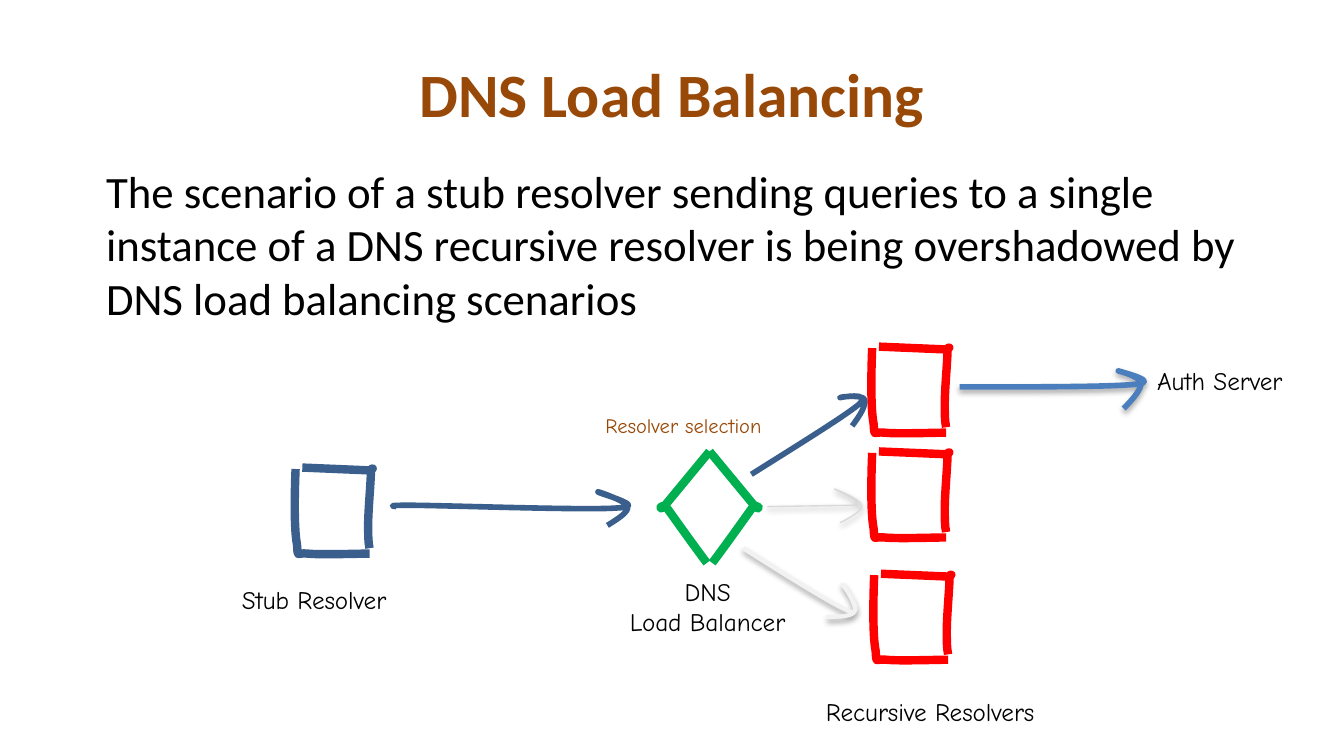
from lxml import etree
from pptx import Presentation
from pptx.dml.color import RGBColor
from pptx.enum.text import MSO_ANCHOR, MSO_AUTO_SIZE, PP_ALIGN
from pptx.oxml.ns import qn
from pptx.util import Cm, Pt

LEFT, CENTER = PP_ALIGN.LEFT, PP_ALIGN.CENTER
TOP, MIDDLE = MSO_ANCHOR.TOP, MSO_ANCHOR.MIDDLE
NO_FIT, GROW = MSO_AUTO_SIZE.NONE, MSO_AUTO_SIZE.SHAPE_TO_FIT_TEXT

BLACK = RGBColor(0x00, 0x00, 0x00)
BROWN = RGBColor(0x98, 0x48, 0x07)
NAVY = RGBColor(0x3A, 0x5F, 0x8C)
BLUE = RGBColor(0x4B, 0x7E, 0xBC)
RED = RGBColor(0xFF, 0x00, 0x00)
GREEN = RGBColor(0x00, 0xB0, 0x50)
GRAY = RGBColor(0xD9, 0xD9, 0xD9)
PALE = RGBColor(0xF2, 0xF2, 0xF2)

HEADING_FONT, SKETCH_FONT = "Calibri", "Comic Neue"

STEP = Cm(0.0254)  # drawing grid of the hand-drawn strokes
CURVE_PARTS = 12  # samples per curve when measuring its extent

# Each stroke is a start and its segments: one point is a line, three a Bezier curve.
SQUARE_LEFT = [(0, 0), [(-1, 23), (-1, 46), (1, 56)], [(2, 67), (0, 62), (9, 63)],
               [(18, 64), (47, 63), (55, 63)]]
SQUARE_RIGHT = [(5, -1), [(52, 1)], [(61, 2), (56, -4), (56, 3)],
                [(56, 9), (54, 31), (54, 41)], [(54, 50), (54, 54), (55, 59)]]
DIAMOND_SIDE = [(0, 0), [(33, 40)], [(39, 47), (37, 36), (31, 43)],
                [(26, 50), (14, 67), (2, 83)]]

SQUARES = [(220, 349, NAVY), (650.5, 428, RED), (649, 337, RED), (649, 259, RED)]

QUERY_ARROW = [(295, 377), [(285, 376), (303, 376), (303, 376)],
               [(330, 376), (437, 380), (460, 378)], [(484, 377), (444, 367), (445, 366)],
               [(446, 366), (466, 373), (467, 377)], [(468, 381), (460, 386), (452, 391)]]
CHOSEN_ARROW = [(559, 353), [(594, 331), (628, 310), (639, 301)],
                [(650, 291), (624, 296), (625, 296)], [(626, 295), (642, 294), (643, 297)],
                [(645, 301), (640, 309), (634, 317)]]
MIDDLE_ARROW = [(571, 377), [(636, 376)], [(645, 374), (620, 364), (621, 364)],
                [(622, 364), (641, 372), (641, 376)], [(642, 380), (633, 385), (625, 389)]]
AUTH_ARROW = [(714, 288), [(770, 288), (826, 288), (845, 286)],
              [(865, 284), (831, 276), (832, 276)], [(832, 276), (848, 280), (849, 285)],
              [(849, 290), (843, 297), (836, 304)]]
LOWER_ARROW = [(553, 408), [(586, 429), (620, 450), (632, 455)],
               [(645, 459), (627, 435), (627, 435)], [(628, 435), (638, 451), (636, 455)],
               [(634, 459), (624, 459), (615, 459)]]


def write_text(box, text, font, size, color=BLACK, bold=False, align=LEFT,
               anchor=TOP, wrap=True, fit=NO_FIT, space_before=0):
    frame = box.text_frame
    frame.text = text
    frame.word_wrap = wrap
    frame.auto_size = fit
    frame.vertical_anchor = anchor
    for para in frame.paragraphs:
        para.alignment = align
        para.space_before = Pt(space_before)
        for span in para.runs:
            span.font.name = font
            span.font.size = Pt(size)
            span.font.bold = bold
            span.font.color.rgb = color


def place(box, left, top, width, height):
    box.left, box.top, box.width, box.height = Cm(left), Cm(top), Cm(width), Cm(height)


def remove_bullets(box):
    for para in box.text_frame.paragraphs:
        properties = para._p.get_or_add_pPr()
        properties.set("marL", "0")
        properties.set("indent", "0")
        etree.SubElement(properties, qn("a:buNone"))


def add_caption(page, text, left, top, width, height, size=13.5, **text_format):
    box = page.shapes.add_textbox(Cm(left), Cm(top), Cm(width), Cm(height))
    write_text(box, text, SKETCH_FONT, size, wrap=False, fit=GROW, **text_format)


def bezier_points(start, first, second, end):
    for part in range(1, CURVE_PARTS + 1):
        t = part / CURVE_PARTS
        u = 1 - t
        yield tuple(round(u**3 * a + 3 * u * u * t * b + 3 * u * t * t * c + t**3 * d)
                    for a, b, c, d in zip(start, first, second, end))


def measuring_points(start, segments):
    """Points along a stroke that span its true extent."""
    points = [start]
    for segment in segments:
        if len(segment) == 1:
            points.append(segment[0])
        else:
            points.extend(bezier_points(points[-1], *segment))
    return points


def set_segments(shape, segments):
    """Give a freeform its lines and Bezier curves after the starting point."""
    outline = next(shape._element.iter(qn("a:path")))
    for old in outline[1:]:
        outline.remove(old)
    for segment in segments:
        tag = "a:lnTo" if len(segment) == 1 else "a:cubicBezTo"
        command = etree.SubElement(outline, qn(tag))
        for x, y in segment:
            etree.SubElement(command, qn("a:pt"), x=str(x - shape.left), y=str(y - shape.top))


def add_soft_shadow(shape):
    effects = shape._element.spPr.find(qn("a:effectLst"))
    shadow = etree.SubElement(effects, qn("a:outerShdw"), blurRad="40000",
                              dist="23000", dir="5400000", rotWithShape="0")
    color = etree.SubElement(shadow, qn("a:srgbClr"), val="000000")
    etree.SubElement(color, qn("a:alpha"), val="35000")


def add_stroke(page, stroke, color, weight, x=0, y=0, flip=1, shadow=False):
    """Draw a stroke moved to x, y on the grid; flip=-1 mirrors it."""
    def to_page(point):
        return round((x + flip * point[0]) * STEP), round((y + point[1]) * STEP)

    start = to_page(stroke[0])
    segments = [[to_page(point) for point in segment] for segment in stroke[1:]]
    builder = page.shapes.build_freeform(*start)
    builder.add_line_segments(measuring_points(start, segments)[1:], close=False)
    shape = builder.convert_to_shape()
    set_segments(shape, segments)
    shape.fill.background()
    shape.line.color.rgb = color
    shape.line.width = Pt(weight)
    shape.shadow.inherit = False
    if shadow:
        add_soft_shadow(shape)


def add_square(page, x, y, color):
    for stroke in (SQUARE_LEFT, SQUARE_RIGHT):
        add_stroke(page, stroke, color, 4.5, x, y)


def add_diamond(page, x, y, color):
    for flip in (-1, 1):
        add_stroke(page, DIAMOND_SIDE, color, 4.5, x, y, flip)


def add_heading(page):
    title, body = page.placeholders
    place(title, 1.27, 0.57, 22.86, 2.38)
    write_text(title, "DNS Load Balancing", HEADING_FONT, 33, color=BROWN, bold=True,
               align=CENTER, anchor=MIDDLE)
    place(body, 1.75, 2.96, 21.89, 3.35)
    write_text(body, "The scenario of a stub resolver sending queries to a single "
               "instance of a DNS recursive resolver is being overshadowed by "
               "DNS load balancing scenarios", HEADING_FONT, 24, space_before=4.8)
    remove_bullets(body)


def main():
    deck = Presentation()
    deck.slide_width, deck.slide_height = Cm(25.4), Cm(14.29)
    page = deck.slides.add_slide(deck.slide_layouts[1])
    add_heading(page)

    for x, y, color in SQUARES:
        add_square(page, x, y, color)
    add_diamond(page, 528, 336, GREEN)

    add_stroke(page, QUERY_ARROW, NAVY, 3)
    add_stroke(page, CHOSEN_ARROW, NAVY, 3)
    add_caption(page, "Stub Resolver", 4.32, 10.92, 4.04, 0.84)
    add_caption(page, "Recursive Resolvers", 15.36, 13.04, 5.54, 0.84)
    add_caption(page, "DNS\nLoad Balancer", 11.32, 10.77, 4.11, 1.42, align=CENTER)
    add_caption(page, "Resolver selection", 11.19, 7.68, 4.14, 0.74, size=11, color=BROWN)
    add_stroke(page, MIDDLE_ARROW, GRAY, 0.75, shadow=True)
    add_stroke(page, AUTH_ARROW, BLUE, 3, shadow=True)
    add_caption(page, "Auth Server", 21.62, 6.78, 3.58, 0.84)
    add_stroke(page, LOWER_ARROW, PALE, 2.25, shadow=True)

    deck.save("out.pptx")


if __name__ == "__main__":
    main()
